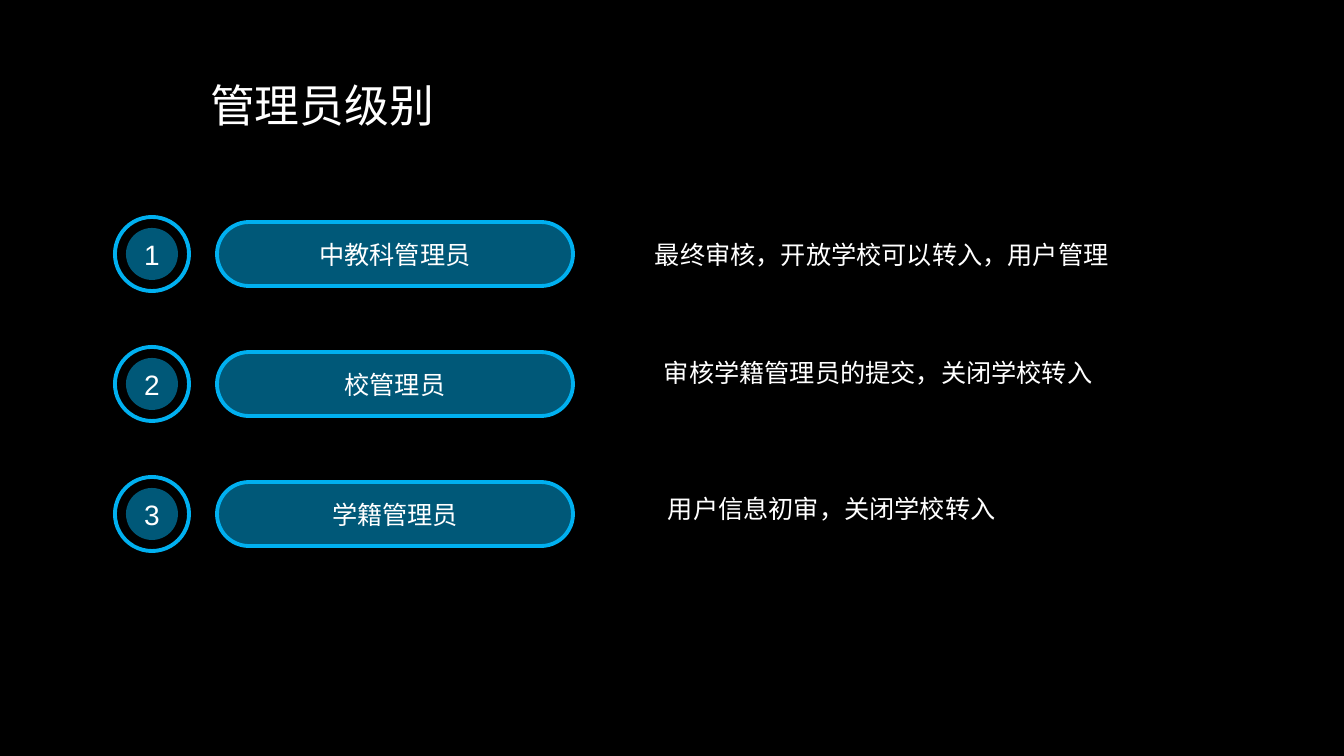
from pptx import Presentation
from pptx import util as u
from pptx.dml.color import RGBColor
from pptx.enum import shapes, text

BLACK = RGBColor(0x00, 0x00, 0x00)
WHITE = RGBColor(0xFF, 0xFF, 0xFF)
TEAL = RGBColor(0x00, 0x58, 0x78)
SKY = RGBColor(0x00, 0xB0, 0xF0)
WIDE, HIGH = 1344, 756
SCALE = u.Inches(40 / 3) / WIDE
PITCH = 130
LEVELS = [
    ("中教科管理员", "最终审核，开放学校可以转入，用户管理", (645, 234, 474, 40)),
    ("校管理员", "审核学籍管理员的提交，关闭学校转入", (654, 352, 449, 40)),
    ("学籍管理员", "用户信息初审，关闭学校转入", (658, 488, 348, 40)),
]


def emu(*px):
    return [u.Emu(round(n * SCALE)) for n in px]


class Deck:
    font = "Arial"
    kind = shapes.MSO_SHAPE

    def __init__(self):
        self.file = Presentation()
        self.file.slide_width, self.file.slide_height = emu(WIDE, HIGH)
        self.slide = self.file.slides.add_slide(self.file.slide_layouts[5])
        back = self.slide.background.fill
        back.solid()
        back.fore_color.rgb = BLACK

    def words(self, shape, line, size, align, anchor):
        frame = shape.text_frame
        frame.vertical_anchor = anchor
        para = frame.paragraphs[0]
        para.alignment = align
        run = para.add_run()
        run.text = line
        run.font.name = self.font
        run.font.size = u.Pt(size)
        run.font.color.rgb = WHITE
        return para

    def title(self, line, box):
        head = self.slide.shapes.title
        head.left, head.top, head.width, head.height = emu(*box)
        head.text_frame.auto_size = text.MSO_AUTO_SIZE.NONE
        para = self.words(head, line, 32, text.PP_ALIGN.LEFT, text.MSO_ANCHOR.MIDDLE)
        para.line_spacing = 0.9

    def shape(self, kind, box, fill, bend=None, edge=None):
        item = self.slide.shapes.add_shape(kind, *emu(*box))
        item.shadow.inherit = False
        item.fill.solid()
        item.fill.fore_color.rgb = fill
        if bend is not None:
            item.adjustments[0] = bend
        if edge is None:
            item.line.fill.background()
        else:
            item.line.color.rgb = edge
            item.line.width = u.Pt(2.75)
        return item

    def label(self, shape, line, size):
        self.words(shape, line, size, text.PP_ALIGN.CENTER, text.MSO_ANCHOR.MIDDLE)

    def badge(self, line, top):
        self.shape(self.kind.DONUT, (113, top, 78, 78), SKY, 0.05)
        disc = self.shape(self.kind.OVAL, (126, top + 13, 52, 52), TEAL)
        self.label(disc, line, 20)

    def pill(self, line, top):
        item = self.shape(self.kind.ROUNDED_RECTANGLE, (217, top, 356, 64), TEAL, 0.5, SKY)
        self.label(item, line, 18)

    def note(self, line, box):
        item = self.slide.shapes.add_textbox(*emu(*box))
        item.text_frame.word_wrap = False
        item.text_frame.auto_size = text.MSO_AUTO_SIZE.SHAPE_TO_FIT_TEXT
        self.words(item, line, 18, text.PP_ALIGN.LEFT, text.MSO_ANCHOR.TOP)


def main():
    deck = Deck()
    deck.title("管理员级别", (200, 35, 574, 146))
    for row, (role, duty, box) in enumerate(LEVELS):
        top = 215 + row * PITCH
        deck.badge(str(row + 1), top)
        deck.pill(role, top + 7)
        deck.note(duty, box)
    deck.file.save("out.pptx")


if __name__ == "__main__":
    main()
